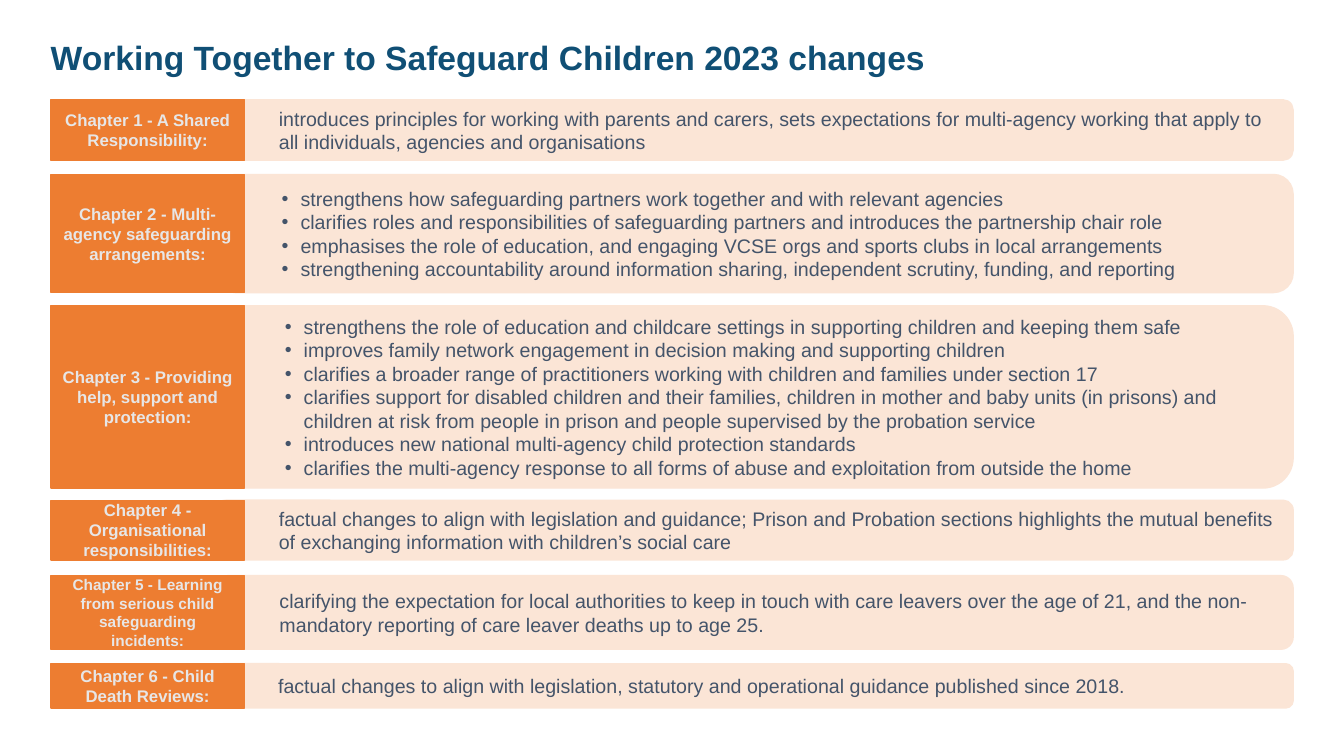
from dataclasses import dataclass

from lxml.etree import SubElement
from pptx import Presentation
from pptx.dml.color import RGBColor
from pptx.enum.shapes import MSO_SHAPE
from pptx.enum.text import MSO_ANCHOR, MSO_AUTO_SIZE, PP_ALIGN
from pptx.oxml.ns import qn
from pptx.util import Pt


@dataclass(frozen=True)
class Theme:
    font: str = "Arial"
    title_color: str = "104F75"
    label_fill: str = "ED7D31"
    label_text: str = "E7E6E6"
    panel_fill: str = "FBE5D6"
    panel_text: str = "44546A"
    title_size: int = 24
    label_size: int = 12
    small_label_size: int = 11
    panel_size: int = 14


@dataclass(frozen=True)
class Chapter:
    label: str
    changes: tuple
    top: float
    height: float
    label_size: int


THEME = Theme()
LABEL_LEFT, LABEL_WIDTH = 36.5, 138
PANEL_LEFT, PANEL_WIDTH = 154, 769.7
TEXT_INDENT = 36
BULLET_INDENT, BULLET_HANG = 49.5, 13.5

CHAPTERS = (
    Chapter("Chapter 1 - A Shared Responsibility:", (
        "introduces principles for working with parents and carers, sets expectations "
        "for multi-agency working that apply to all individuals, agencies and organisations",
    ), 71.3, 43.2, THEME.label_size),
    Chapter("Chapter 2 - Multi-agency safeguarding arrangements:", (
        "strengthens how safeguarding partners work together and with relevant agencies",
        "clarifies roles and responsibilities of safeguarding partners and introduces "
        "the partnership chair role",
        "emphasises the role of education, and engaging VCSE orgs and sports clubs "
        "in local arrangements",
        "strengthening accountability around information sharing, independent scrutiny, "
        "funding, and reporting",
    ), 124.6, 84.4, THEME.label_size),
    Chapter("Chapter 3 - Providing help, support and protection:", (
        "strengthens the role of education and childcare settings in supporting children "
        "and keeping them safe",
        "improves family network engagement in decision making and supporting children",
        "clarifies a broader range of practitioners working with children and families "
        "under section 17",
        "clarifies support for disabled children and their families, children in mother "
        "and baby units (in prisons) and children at risk from people in prison and "
        "people supervised by the probation service",
        "introduces new national multi-agency child protection standards",
        "clarifies the multi-agency response to all forms of abuse and exploitation "
        "from outside the home",
    ), 218.4, 130.2, THEME.label_size),
    Chapter("Chapter 4 - Organisational responsibilities:", (
        "factual changes to align with legislation and guidance; Prison and Probation "
        "sections highlights the mutual benefits of exchanging information with "
        "children’s social care",
    ), 357.3, 42.6, THEME.label_size),
    Chapter("Chapter 5 - Learning from serious child safeguarding incidents:", (
        "clarifying the expectation for local authorities to keep in touch with care "
        "leavers over the age of 21, and the non-mandatory reporting of care leaver "
        "deaths up to age 25.",
    ), 411.2, 52.6, THEME.small_label_size),
    Chapter("Chapter 6 - Child Death Reviews:", (
        "factual changes to align with legislation, statutory and operational guidance "
        "published since 2018.",
    ), 474.1, 31.6, THEME.label_size),
)


def format_text(text_frame, size, color, alignment, bold=False):
    for paragraph in text_frame.paragraphs:
        paragraph.alignment = alignment
        for run in paragraph.runs:
            run.font.name = THEME.font
            run.font.size = Pt(size)
            run.font.bold = bold
            run.font.color.rgb = RGBColor.from_string(color)


def indent(paragraph, bulleted):
    properties = paragraph._p.get_or_add_pPr()
    properties.set("marL", str(Pt(BULLET_INDENT if bulleted else TEXT_INDENT)))
    if bulleted:
        properties.set("indent", str(-Pt(BULLET_HANG)))
        SubElement(properties, qn("a:buFont")).set("typeface", THEME.font)
        SubElement(properties, qn("a:buChar")).set("char", "•")


def add_block(slide, kind, left, top, width, height, fill, text):
    shape = slide.shapes.add_shape(kind, Pt(left), Pt(top), Pt(width), Pt(height))
    shape.shadow.inherit = False
    shape.fill.solid()
    shape.fill.fore_color.rgb = RGBColor.from_string(fill)
    shape.line.color.rgb = RGBColor.from_string(fill)
    shape.line.width = Pt(1)
    text_frame = shape.text_frame
    text_frame.text = text
    text_frame.word_wrap = True
    text_frame.vertical_anchor = MSO_ANCHOR.MIDDLE
    return text_frame


def add_panel(slide, chapter):
    text_frame = add_block(slide, MSO_SHAPE.ROUNDED_RECTANGLE, PANEL_LEFT, chapter.top,
                           PANEL_WIDTH, chapter.height, THEME.panel_fill,
                           "\n".join(chapter.changes))
    format_text(text_frame, THEME.panel_size, THEME.panel_text, PP_ALIGN.LEFT)
    for paragraph in text_frame.paragraphs:
        paragraph.level = 1
        indent(paragraph, bulleted=len(chapter.changes) > 1)


def add_label(slide, chapter):
    text_frame = add_block(slide, MSO_SHAPE.RECTANGLE, LABEL_LEFT, chapter.top,
                           LABEL_WIDTH, chapter.height, THEME.label_fill, chapter.label)
    format_text(text_frame, chapter.label_size, THEME.label_text, PP_ALIGN.CENTER, bold=True)


def set_title(slide, text):
    title = slide.shapes.title
    title.left, title.top, title.width, title.height = Pt(29), Pt(23), Pt(915), Pt(36)
    text_frame = title.text_frame
    text_frame.text = text
    text_frame.word_wrap = True
    text_frame.auto_size = MSO_AUTO_SIZE.NONE
    text_frame.vertical_anchor = MSO_ANCHOR.TOP
    format_text(text_frame, THEME.title_size, THEME.title_color, PP_ALIGN.LEFT, bold=True)


def main():
    presentation = Presentation()
    presentation.slide_width, presentation.slide_height = Pt(960), Pt(540)
    title_only = presentation.slide_layouts[5]
    slide = presentation.slides.add_slide(title_only)
    set_title(slide, "Working Together to Safeguard Children 2023 changes")
    for chapter in CHAPTERS:
        add_panel(slide, chapter)
        add_label(slide, chapter)
    presentation.save("out.pptx")


if __name__ == "__main__":
    main()
